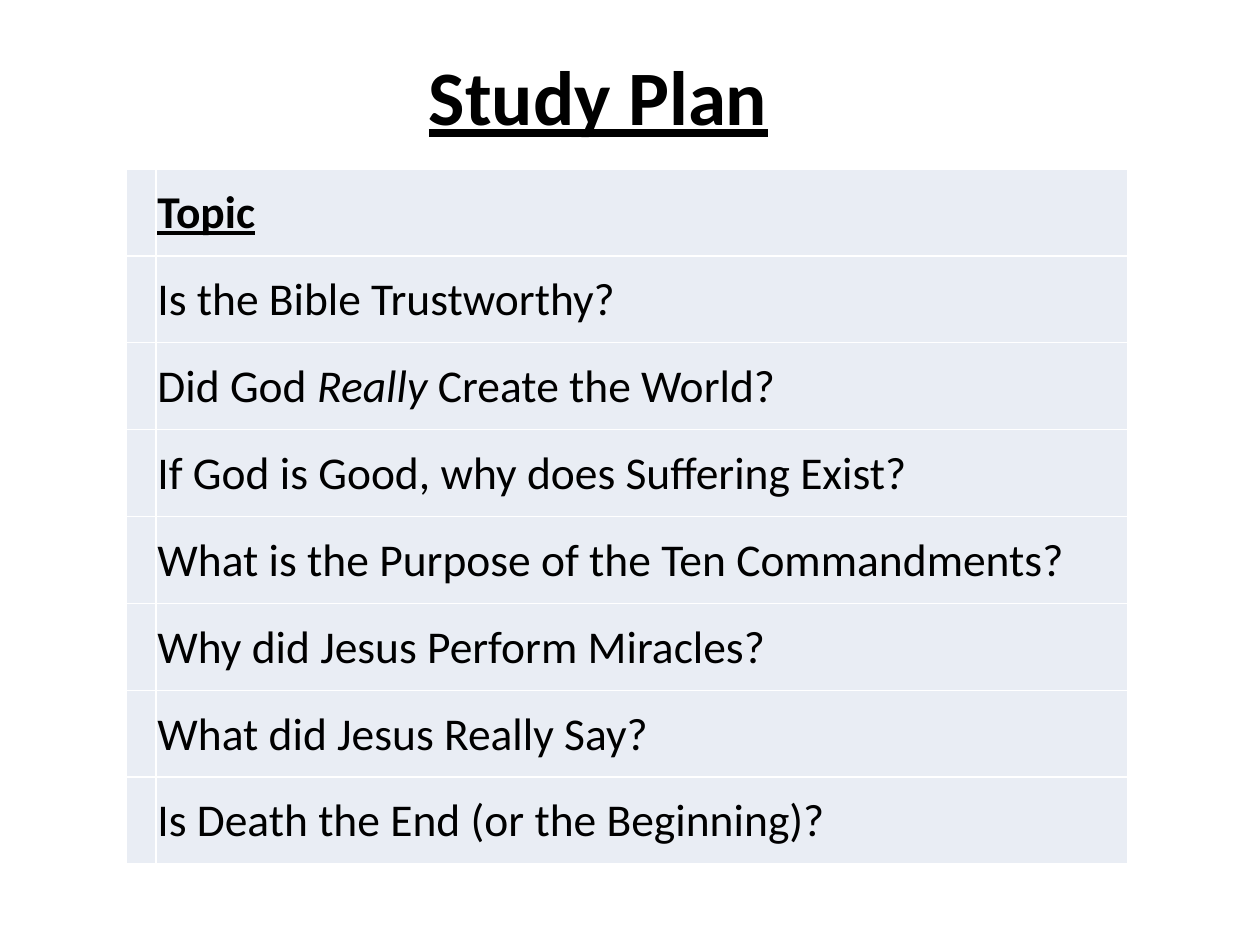
from pptx import Presentation
from pptx.dml.color import RGBColor
from pptx.enum.text import MSO_ANCHOR, PP_ALIGN
from pptx.util import Inches, Pt

MIDDLE = MSO_ANCHOR.MIDDLE
CENTER = PP_ALIGN.CENTER
TITLE_ONLY = 5
FONT = "Calibri"
BLACK = "000000"
CELL_FILL = "E9EDF4"
COLUMN_WIDTHS = (0.21, 7.71)
ROW_HEIGHT = 0.69

# Each topic is a list of (text, format) runs.
TOPICS = [
    [("Topic", {"bold": True, "underline": True})],
    [("Is the Bible Trustworthy?", {})],
    [("Did God ", {}), ("Really ", {"italic": True}), ("Create the World?", {})],
    [("If God is Good, why does Suffering Exist?", {})],
    [("What is the Purpose of the Ten Commandments?", {})],
    [("Why did Jesus Perform Miracles?", {})],
    [("What did Jesus Really Say?", {})],
    [("Is Death the End (or the Beginning)?", {})],
]


def rgb(color):
    return RGBColor.from_string(color)


def add_run(p, text, size=26, color=BLACK, bold=False, italic=False, underline=False):
    r = p.add_run()
    r.text = text
    font = r.font
    font.name, font.size = FONT, Pt(size)
    font.bold, font.italic, font.underline = bold, italic, underline
    font.color.rgb = rgb(color)


def set_title(s, text):
    title = s.shapes.title
    title.left, title.top = Inches(2.5), Inches(0.25)
    title.width, title.height = Inches(4.5), Inches(1)
    tf = title.text_frame
    tf.vertical_anchor = MIDDLE
    p = tf.paragraphs[0]
    p.alignment = CENTER
    add_run(p, text, size=44, bold=True, underline=True)


def fill_topic_cell(cell, runs):
    cell.vertical_anchor = MIDDLE
    cell.margin_left = cell.margin_right = cell.margin_top = Inches(0.01)
    cell.margin_bottom = 0
    p = cell.text_frame.paragraphs[0]
    for text, style in runs:
        add_run(p, text, **style)


def add_topic_table(s, topics):
    """Add a narrow empty column beside the topics; the table style draws white rules."""
    table = s.shapes.add_table(
        len(topics), len(COLUMN_WIDTHS), Inches(1), Inches(1.34),
        Inches(sum(COLUMN_WIDTHS)), Inches(ROW_HEIGHT * len(topics))).table
    table.first_row = table.horz_banding = False
    for column, width in zip(table.columns, COLUMN_WIDTHS):
        column.width = Inches(width)
    for row, runs in zip(table.rows, topics):
        row.height = Inches(ROW_HEIGHT)
        for cell in row.cells:
            cell.fill.solid()
            cell.fill.fore_color.rgb = rgb(CELL_FILL)
        fill_topic_cell(row.cells[1], runs)


def main():
    prs = Presentation()
    prs.slide_width, prs.slide_height = Inches(10), Inches(7.5)
    s = prs.slides.add_slide(prs.slide_layouts[TITLE_ONLY])
    set_title(s, "Study Plan")
    add_topic_table(s, TOPICS)
    prs.save("out.pptx")


if __name__ == "__main__":
    main()
